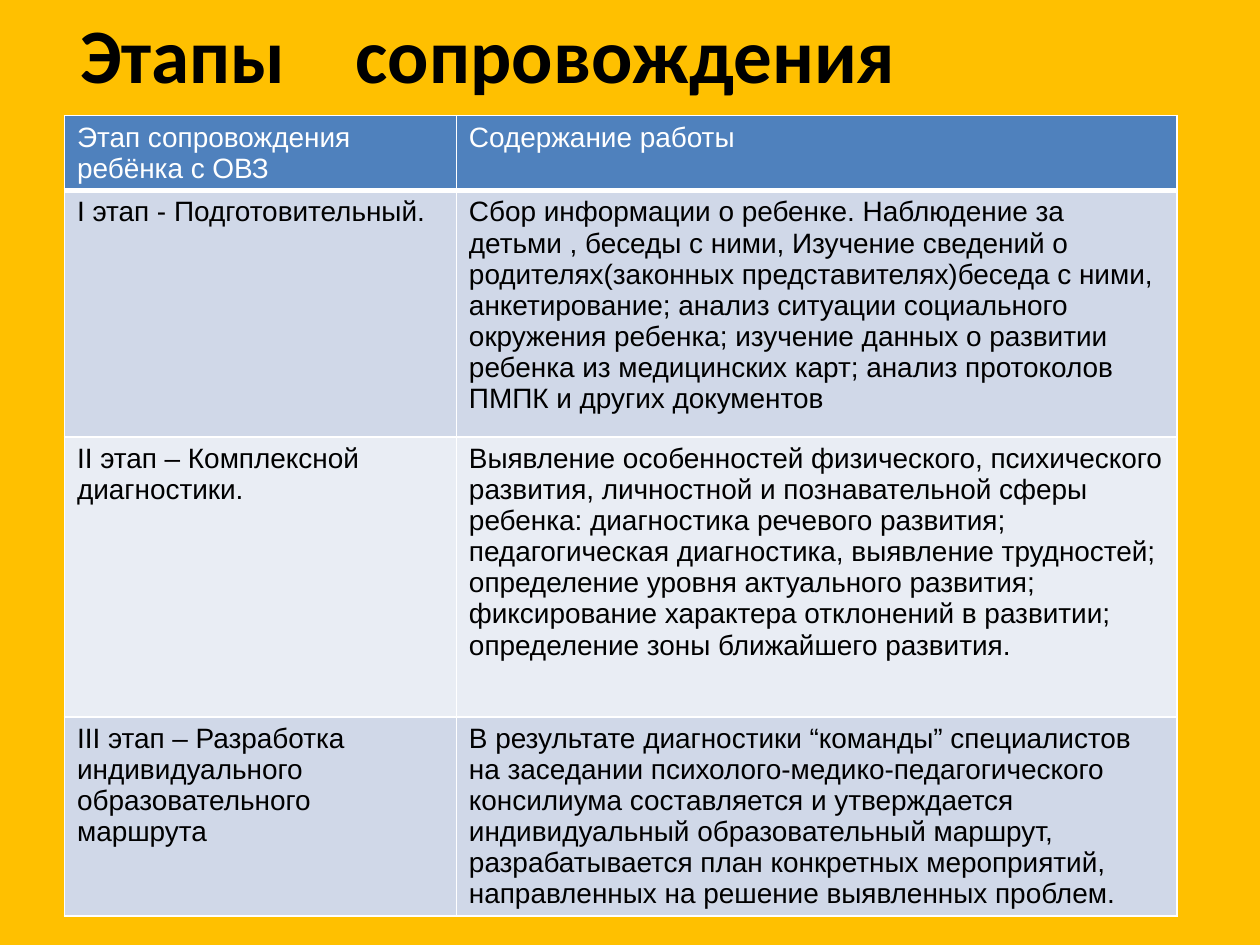
from dataclasses import dataclass

from lxml.etree import SubElement
from pptx import Presentation
from pptx.dml.color import RGBColor as Rgb
from pptx.enum.text import MSO_ANCHOR as Anchor, PP_ALIGN as Align
from pptx.oxml.ns import qn
from pptx.util import Cm, Pt


@dataclass(frozen=True)
class Theme:
    background: str = "FFC000"
    ink: str = "000000"
    header_ink: str = "FFFFFF"
    header_fill: str = "4F81BD"
    bands: tuple = ("D0D8E8", "E9EDF4")
    border: str = "FFFFFF"
    title_font: str = "Calibri"
    body_font: str = "Arial"
    title_size: int = 44
    body_size: int = 16
    thin: int = 1
    thick: int = 3


STAGES = [
    ("Этап сопровождения ребёнка с ОВЗ", "Содержание работы"),
    ("I этап - Подготовительный.",
     "Сбор информации о ребенке. Наблюдение за детьми , беседы с ними, "
     "Изучение сведений о родителях(законных представителях)беседа с ними, "
     "анкетирование; анализ ситуации социального окружения ребенка; "
     "изучение данных о развитии ребенка из медицинских карт; "
     "анализ протоколов ПМПК и других документов"),
    ("II этап – Комплексной диагностики.",
     "Выявление особенностей физического, психического развития, "
     "личностной и познавательной сферы ребенка: диагностика речевого развития; "
     "педагогическая диагностика, выявление трудностей; "
     "определение уровня актуального развития; "
     "фиксирование характера отклонений в развитии; "
     "определение зоны ближайшего развития."),
    ("III этап – Разработка индивидуального образовательного маршрута",
     "В результате диагностики “команды” специалистов на заседании "
     "психолого-медико-педагогического консилиума составляется и утверждается "
     "индивидуальный образовательный маршрут, разрабатывается план конкретных "
     "мероприятий, направленных на решение выявленных проблем."),
]
COLUMN_WIDTHS = (7.9, 14.53)
ROW_HEIGHTS = (1.5, 4.97, 5.64, 4.02)


class SlideBuilder:
    def __init__(self, slide, theme):
        self.slide = slide
        self.theme = theme

    def background(self):
        fill = self.slide.background.fill
        fill.solid()
        fill.fore_color.rgb = Rgb.from_string(self.theme.background)

    def add_run(self, paragraph, text, font, size, color, bold=False):
        run = paragraph.add_run()
        run.text = text
        run.font.name = font
        run.font.size = Pt(size)
        run.font.bold = bold
        run.font.color.rgb = Rgb.from_string(color)
        return run

    def title(self, words, gap, left, top, width, height):
        """Set the title; gap is the extra space between words, in points."""
        theme = self.theme
        title = self.slide.shapes.title
        title.left, title.top = Cm(left), Cm(top)
        title.width, title.height = Cm(width), Cm(height)
        title.text_frame.vertical_anchor = Anchor.MIDDLE
        heading = title.text_frame.paragraphs[0]
        heading.alignment = Align.CENTER
        style = (theme.title_font, theme.title_size, theme.ink, True)
        for index, word in enumerate(words):
            if index:
                space = self.add_run(heading, " ", *style)
                space.font._element.set("spc", str(gap * 100))
            self.add_run(heading, word, *style)

    def borders(self, cell, bottom):
        properties = cell._tc.get_or_add_tcPr()
        thin = self.theme.thin
        sides = (("lnL", thin), ("lnR", thin), ("lnT", thin), ("lnB", bottom))
        for position, (side, width) in enumerate(sides):
            line = SubElement(properties, qn(f"a:{side}"), w=str(Pt(width)))
            fill = SubElement(line, qn("a:solidFill"))
            SubElement(fill, qn("a:srgbClr"), val=self.theme.border)
            properties.insert(position, line)  # borders precede the cell fill

    def table(self, rows, left, top, widths, heights):
        theme = self.theme
        table = self.slide.shapes.add_table(
            len(rows), len(widths), Cm(left), Cm(top),
            Cm(sum(widths)), Cm(sum(heights))).table
        for column, width in zip(table.columns, widths):
            column.width = Cm(width)
        for index, (row, height, texts) in enumerate(zip(table.rows, heights, rows)):
            row.height = Cm(height)
            is_header = index == 0
            band = theme.bands[(index - 1) % len(theme.bands)]
            fill = theme.header_fill if is_header else band
            ink = theme.header_ink if is_header else theme.ink
            for cell, text in zip(row.cells, texts):
                cell.fill.solid()
                cell.fill.fore_color.rgb = Rgb.from_string(fill)
                self.add_run(cell.text_frame.paragraphs[0], text,
                             theme.body_font, theme.body_size, ink)
                self.borders(cell, theme.thick if is_header else theme.thin)


def main():
    deck = Presentation()
    deck.slide_width, deck.slide_height = Cm(25.4), Cm(19.05)
    title_only = deck.slide_layouts[5]
    builder = SlideBuilder(deck.slides.add_slide(title_only), Theme())
    builder.background()
    builder.title(("Этапы", "сопровождения"), 30, 0.58, 0, 18.52, 2.13)
    builder.table(STAGES, 1.3, 2.33, COLUMN_WIDTHS, ROW_HEIGHTS)
    deck.save("out.pptx")


if __name__ == "__main__":
    main()
